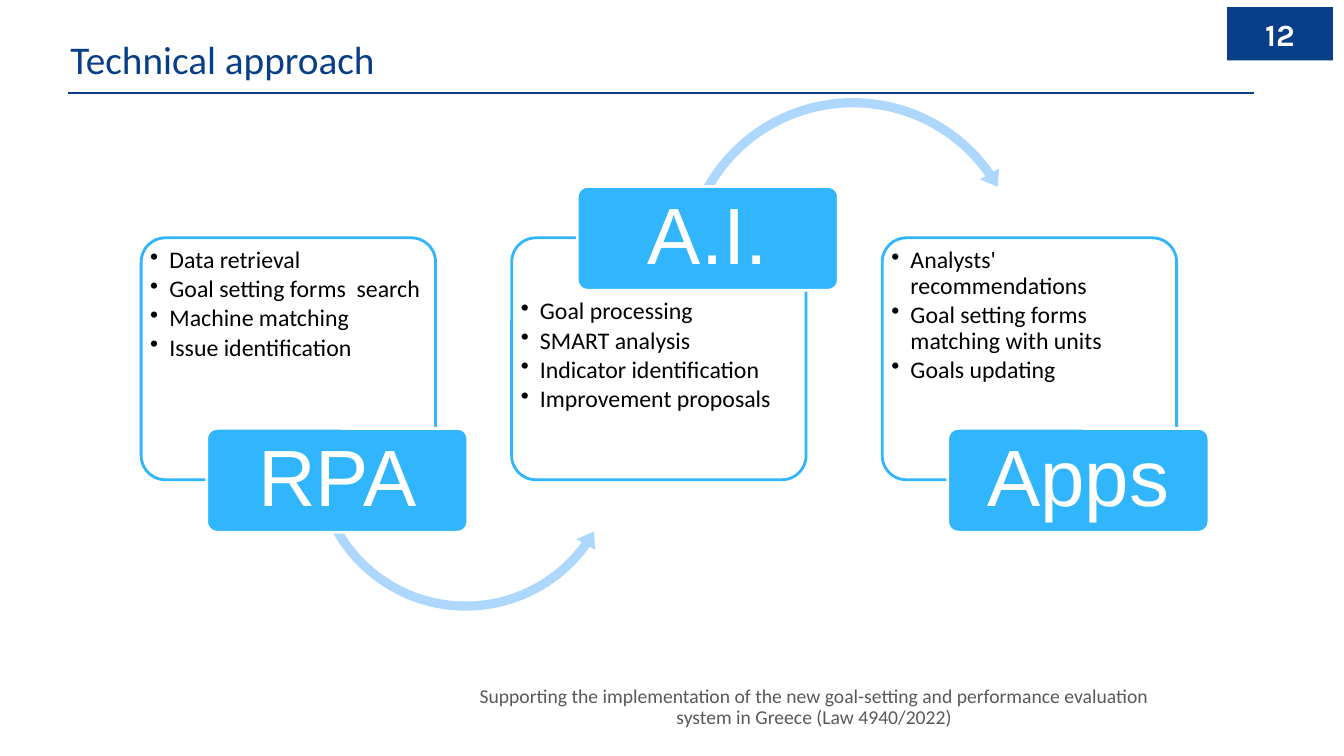
"""Build the technical approach slide: three staggered cards joined by curved arrows."""
from dataclasses import dataclass

from lxml.etree import SubElement
from pptx import Presentation
from pptx.dml.color import RGBColor
from pptx.enum.shapes import MSO_CONNECTOR, MSO_SHAPE
from pptx.enum.text import MSO_ANCHOR, PP_ALIGN
from pptx.oxml.ns import qn
from pptx.util import Inches, Pt


@dataclass(frozen=True)
class Theme:
    navy: str = "073E87"
    blue: str = "31B6FD"
    pale: str = "AED7FE"
    white: str = "FFFFFF"
    black: str = "000000"
    grey: str = "595959"
    body_font: str = "Calibri"
    label_font: str = "Arial"
    number_font: str = "Karla"
    title: int = 28
    label: int = 57
    body: int = 17
    footer: int = 14
    number: int = 22


T = Theme()

STEPS = [
    ("RPA", False, ["Data retrieval", "Goal setting forms  search",
                    "Machine matching", "Issue identification"]),
    ("A.I.", True, ["Goal processing", "SMART analysis",
                    "Indicator identification", "Improvement proposals"]),
    ("Apps", False, ["Analysts' recommendations",
                     "Goal setting forms  matching with units", "Goals updating"]),
]
ARROWS = [
    (MSO_SHAPE.LEFT_CIRCULAR_ARROW, (3.05, 2.98, 3.14, 3.14),
     (0.029, 3.59, 21.345, 90.245, 0.034)),
    (MSO_SHAPE.CIRCULAR_ARROW, (6.7, 0.91, 3.52, 3.52),
     (0.026, 3.187, 195.058, 125.755, 0.031)),
]
CARD_LEFT, CARD_PITCH = 1.4, 3.675


def apply(obj, values):
    """Set every attribute named in a dict of format values."""
    for name, value in values.items():
        setattr(obj, name, value)


def add_text(tf, lines, size, font, color, bold=False, bullet=False, frame=None, para=None):
    """Fill a text frame with one formatted paragraph per line."""
    apply(tf, {"word_wrap": True, **(frame or {})})
    for i, line in enumerate(lines):
        p = tf.add_paragraph() if i else tf.paragraphs[0]
        if bullet:
            pPr = p._p.get_or_add_pPr()
            pPr.set("marL", str(Inches(0.19)))
            pPr.set("indent", str(Inches(-0.19)))
            SubElement(pPr, qn("a:buChar")).set("char", "•")
        apply(p, para or {})
        r = p.add_run()
        r.text = line
        apply(r.font, {"size": Pt(size), "name": font, "bold": bold})
        r.font.color.rgb = RGBColor.from_string(color)


def add_box(s, kind, box, fill, line=None, adjustments=()):
    """Add a filled preset shape with an optional outline."""
    sp = s.shapes.add_shape(kind, *map(Inches, box))
    sp.shadow.inherit = False
    sp.fill.solid()
    sp.fill.fore_color.rgb = RGBColor.from_string(fill)
    if line:
        sp.line.color.rgb = RGBColor.from_string(line)
        sp.line.width = Pt(2)
    else:
        sp.line.fill.background()
    for i, value in enumerate(adjustments):
        sp.adjustments[i] = value
    return sp


def add_card(s, left, raised, bullets):
    """Add an outlined card with its bullet list."""
    sp = add_box(s, MSO_SHAPE.ROUNDED_RECTANGLE, (left, 2.36, 2.92, 2.4),
                 T.white, T.blue, [0.1])
    add_text(sp.text_frame, bullets, T.body, T.body_font, T.black, bullet=True,
             frame={"vertical_anchor": MSO_ANCHOR.TOP,
                    "margin_left": Inches(0.02), "margin_right": Inches(0.04),
                    "margin_top": Inches(0.54 if raised else 0.03),
                    "margin_bottom": Inches(0.03)},
             para={"alignment": PP_ALIGN.LEFT, "line_spacing": 0.9, "space_after": Pt(2.5)})


def add_label(s, card_left, raised, text):
    """Add the label that overlaps a card's top or bottom edge."""
    top = 1.85 if raised else 4.25
    sp = add_box(s, MSO_SHAPE.ROUNDED_RECTANGLE, (card_left + 0.65, top, 2.59, 1.03),
                 T.blue, T.white, [0.1])
    add_text(sp.text_frame, [text], T.label, T.label_font, T.white,
             frame={"vertical_anchor": MSO_ANCHOR.MIDDLE,
                    "margin_left": Inches(0.12), "margin_right": Inches(0.12),
                    "margin_top": Inches(0.08), "margin_bottom": Inches(0.08)},
             para={"alignment": PP_ALIGN.CENTER, "line_spacing": 0.9})


def add_rule(s, left, right, y):
    """Add the horizontal rule under the title."""
    c = s.shapes.add_connector(MSO_CONNECTOR.STRAIGHT, *map(Inches, (left, y, right, y)))
    c.line.color.rgb = RGBColor.from_string(T.navy)
    c.line.width = Pt(1.5)
    SubElement(c._element.spPr, qn("a:effectLst"))


def add_textbox(s, box, text, size, color, **formats):
    """Add a text box holding a single paragraph."""
    sp = s.shapes.add_textbox(*map(Inches, box))
    add_text(sp.text_frame, [text], size, T.body_font, color, **formats)


def main():
    """Build and save the slide."""
    prs = Presentation()
    apply(prs, {"slide_width": Inches(13.33), "slide_height": Inches(7.5)})
    s = prs.slides.add_slide(prs.slide_layouts[6])

    add_rule(s, 0.67, 12.44, 0.92)
    number = add_box(s, MSO_SHAPE.RECTANGLE, (12.17, 0.07, 1.05, 0.53), T.navy)
    add_text(number.text_frame, ["12"], T.number, T.number_font, T.white, bold=True,
             frame={"vertical_anchor": MSO_ANCHOR.MIDDLE},
             para={"alignment": PP_ALIGN.CENTER})
    add_textbox(s, (0.6, 0.3, 11.56, 0.45), "Technical approach", T.title, T.navy)

    for i, (label, raised, bullets) in enumerate(STEPS):
        left = CARD_LEFT + i * CARD_PITCH
        add_card(s, left, raised, bullets)
        if i < len(ARROWS):
            kind, box, adjustments = ARROWS[i]
            add_box(s, kind, box, T.pale, adjustments=adjustments)
        add_label(s, left, raised, label)

    add_textbox(s, (4.63, 6.83, 6.89, 0.45),
                "Supporting the implementation of the new goal-setting and performance "
                "evaluation system in Greece (Law 4940/2022)", T.footer, T.grey,
                frame={"vertical_anchor": MSO_ANCHOR.BOTTOM},
                para={"alignment": PP_ALIGN.CENTER, "line_spacing": 0.9})
    prs.save("out.pptx")


if __name__ == "__main__":
    main()
